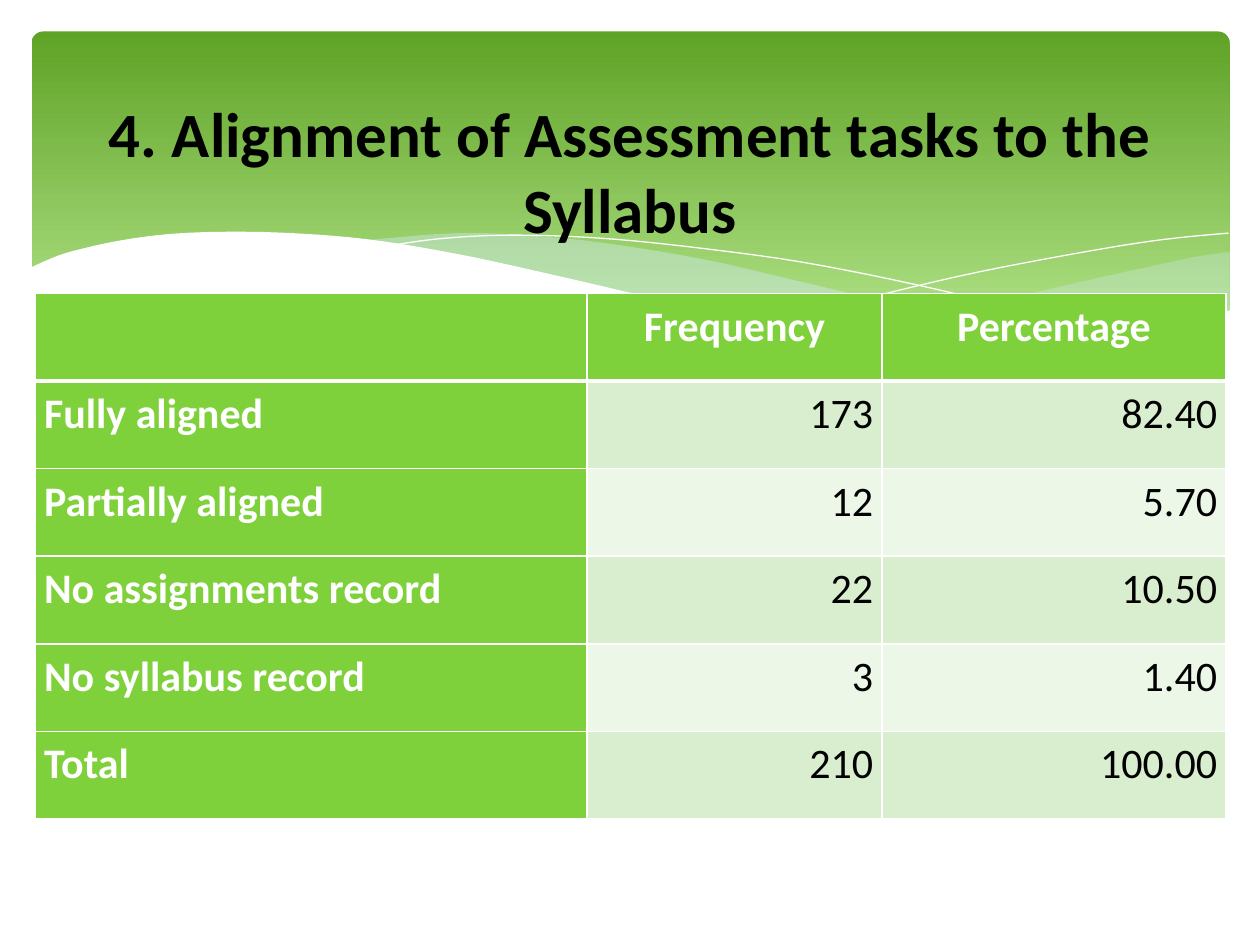
from lxml import etree
from pptx import Presentation
from pptx.dml.color import RGBColor
from pptx.enum.shapes import MSO_SHAPE
from pptx.enum.text import MSO_ANCHOR, PP_ALIGN
from pptx.oxml.ns import qn
from pptx.util import Emu, Inches, Pt

LEFT, CENTER, RIGHT = PP_ALIGN.LEFT, PP_ALIGN.CENTER, PP_ALIGN.RIGHT
MIDDLE = MSO_ANCHOR.MIDDLE
ROUNDED = MSO_SHAPE.ROUNDED_RECTANGLE
TITLE_ONLY = 5
GRID_COLUMNS, GRID_ROWS = 100, 75
COLORS = {
    "white": "FFFFFF", "black": "000000", "green": "7FD13B",
    "band_dark": "D8EECE", "band_light": "ECF7E8",
    "banner_top": "5FA326", "banner_bottom": "B2E389", "mist": "D6ECFF",
}

# Wave edges as (column, row) points on the grid
RIGHT_TOP = [(97.6, 20), (94.8, 20.4), (90.6, 21.3), (86.1, 22.3),
             (77.9, 24.2), (72.9, 25.3), (66.1, 26.5)]
RIGHT_BOTTOM = [(66.1, 26.5), (71.9, 27.2), (76.9, 27.7), (81.4, 27.75),
                (86.3, 27.5), (90.5, 26.9), (94.2, 25.9), (97.6, 24.7)]
MIDDLE_TOP = [(89.3, 27.3), (83.7, 26.5), (77.5, 25.4), (70.6, 24),
              (62.9, 22.2), (56.9, 20.8), (51.4, 19.8), (46.5, 19.1),
              (42, 18.7), (38, 18.5), (34.4, 18.6), (28.6, 19.1)]
MIDDLE_BOTTOM = [(28.6, 19.1), (34.2, 19.9), (40.4, 21.1), (44.9, 22.2),
                 (53, 24), (60.1, 25.5), (66.5, 26.6), (72.2, 27.4),
                 (77.3, 27.7), (81.8, 27.8), (85.7, 27.7), (89.3, 27.3)]
FALLING_LINE = [(30.9, 19.5), (34.4, 19), (38.7, 18.7), (43.3, 18.7),
                (48.9, 19), (55.6, 19.7), (63.6, 20.8), (72.7, 22.6),
                (83.1, 25.1), (90.7, 27.2)]
RISING_LINE = [(61.3, 25.7), (69.5, 23.5), (77.6, 21.6), (86.6, 19.9),
               (92.4, 19), (97.5, 18.5)]
FRONT_TOP = [(97.7, 24.6), (93, 26.2), (87.5, 27.3), (80.9, 27.7),
             (74.4, 27.4), (66.8, 26.5), (60.3, 25.4), (52.9, 23.9),
             (44.7, 22), (36.5, 20.2), (29.2, 19), (23, 18.5),
             (17.7, 18.4), (13.2, 18.6), (9.5, 19.1), (6.7, 19.7),
             (4.6, 20.3), (2.3, 21.3)]
FRONT_BASE = [(2.3, 32.9), (97.7, 32.9)]

HEADINGS = ["", "Frequency", "Percentage"]
RECORDS = [
    ("Fully aligned", "173", "82.40"),
    ("Partially aligned", "12", "5.70"),
    ("No assignments record", "22", "10.50"),
    ("No syllabus record", "3", "1.40"),
    ("Total", "210", "100.00"),
]


def smooth(points, steps=5):
    """Catmull-Rom curve through the points, as a dense list."""
    padded = [points[0], *points, points[-1]]
    curve = [points[0]]
    for a, b, c, d in zip(padded, padded[1:], padded[2:], padded[3:]):
        for t in (step / steps for step in range(1, steps + 1)):
            curve.append(tuple(
                (2 * q + (r - p) * t + (2 * p - 5 * q + 4 * r - s) * t ** 2
                 + (3 * q - p - 3 * r + s) * t ** 3) / 2
                for p, q, r, s in zip(a, b, c, d)))
    return curve


def color(name):
    return RGBColor.from_string(COLORS[name])


class Deck:
    """Holds the style, the grid and the current slide."""

    font, table_size, title_size = "Calibri", 24, 36

    def __init__(self, width, height):
        self.file = Presentation()
        self.file.slide_width, self.file.slide_height = width, height
        self.column, self.row = width / GRID_COLUMNS, height / GRID_ROWS
        self.slide = self.file.slides.add_slide(self.file.slide_layouts[TITLE_ONLY])
        self.shapes = self.slide.shapes

    def point(self, column, row):
        return Emu(round(column * self.column)), Emu(round(row * self.row))

    def add_text(self, paragraph, text, size, ink, bold, align):
        paragraph.alignment = align
        run = paragraph.add_run()
        run.text = text
        run.font.name, run.font.size, run.font.bold = self.font, Pt(size), bold
        run.font.color.rgb = color(ink)

    def banner(self, left, top, width, height):
        panel = self.shapes.add_shape(
            ROUNDED, *self.point(left, top), *self.point(width, height))
        panel.adjustments[0] = 0.034
        panel.shadow.inherit = False
        panel.line.fill.background()
        panel.fill.gradient()
        panel.fill.gradient_angle = 270
        stops = zip(panel.fill.gradient_stops, ("banner_top", "banner_bottom"), (0, 0.9))
        for stop, name, position in stops:
            stop.color.rgb, stop.position = color(name), position

    def wave(self, *edges, fill=None, opacity=100):
        """A filled area between edges, or a white hairline without a fill."""
        start, *rest = [self.point(*p) for edge in edges for p in edge]
        builder = self.shapes.build_freeform(*start, scale=1.0)
        builder.add_line_segments(rest, close=fill is not None)
        ribbon = builder.convert_to_shape()
        ribbon.shadow.inherit = False
        if fill is None:
            ribbon.fill.background()
            ribbon.line.color.rgb, ribbon.line.width = color("white"), Pt(0)
            return
        ribbon.line.fill.background()
        ribbon.fill.solid()
        ribbon.fill.fore_color.rgb = color(fill)
        if opacity < 100:
            tint = ribbon._element.spPr.find(f"{qn('a:solidFill')}/{qn('a:srgbClr')}")
            etree.SubElement(tint, qn("a:alpha"), val=str(opacity * 1000))

    def title(self, text, left, top, width, height):
        heading = self.shapes.title
        heading.left, heading.top = self.point(left, top)
        heading.width, heading.height = self.point(width, height)
        frame = heading.text_frame
        frame.word_wrap, frame.vertical_anchor = True, MIDDLE
        self.add_text(frame.paragraphs[0], text, self.title_size, "black", True, CENTER)
        self.shapes._spTree.append(heading._element)  # bring to the front

    def border(self, cell, bottom):
        properties = cell._tc.get_or_add_tcPr()
        widths = {"lnL": 1, "lnR": 1, "lnT": 1, "lnB": bottom}
        for place, (side, width) in enumerate(widths.items()):
            line = etree.Element(qn(f"a:{side}"), w=str(int(Pt(width))))
            solid = etree.SubElement(line, qn("a:solidFill"))
            etree.SubElement(solid, qn("a:srgbClr"), val=COLORS["white"])
            properties.insert(place, line)

    def cell(self, cell, text, fill, ink, bold, align, bottom=1):
        cell.fill.solid()
        cell.fill.fore_color.rgb = color(fill)
        self.border(cell, bottom)
        cell.margin_left = cell.margin_right = Inches(0.07)
        cell.margin_top = cell.margin_bottom = 0
        if text:
            paragraph = cell.text_frame.paragraphs[0]
            paragraph.line_spacing = 1.15
            self.add_text(paragraph, text, self.table_size, ink, bold, align)

    def table(self, headings, records, left, top, widths, height):
        grid = self.shapes.add_table(
            len(records) + 1, len(headings), *self.point(left, top),
            *self.point(sum(widths), height)).table
        for column, width in zip(grid.columns, widths):
            column.width = self.point(width, 0)[0]
        for c, heading in enumerate(headings):
            self.cell(grid.cell(0, c), heading, "green", "white", True, CENTER, bottom=3)
        for r, (label, *values) in enumerate(records, 1):
            self.cell(grid.cell(r, 0), label, "green", "white", True, LEFT)
            band = "band_dark" if r % 2 else "band_light"
            for c, value in enumerate(values, 1):
                self.cell(grid.cell(r, c), value, band, "black", False, RIGHT)


def main():
    deck = Deck(Inches(10), Inches(7.5))
    deck.banner(2.5, 2.5, 95.1, 27)
    deck.wave(smooth(RIGHT_TOP), smooth(RIGHT_BOTTOM), fill="mist", opacity=29)
    deck.wave(smooth(MIDDLE_TOP), smooth(MIDDLE_BOTTOM), fill="mist", opacity=40)
    deck.wave(smooth(FALLING_LINE))
    deck.wave(smooth(RISING_LINE))
    deck.wave(smooth(FRONT_TOP), FRONT_BASE, fill="white")
    deck.table(HEADINGS, RECORDS, 2.8, 23.3, (43.8, 23.4, 27.3), 41.7)
    deck.title("4. Alignment of Assessment tasks to the Syllabus", 5, 3.7, 90, 19.6)
    deck.file.save("out.pptx")


if __name__ == "__main__":
    main()
